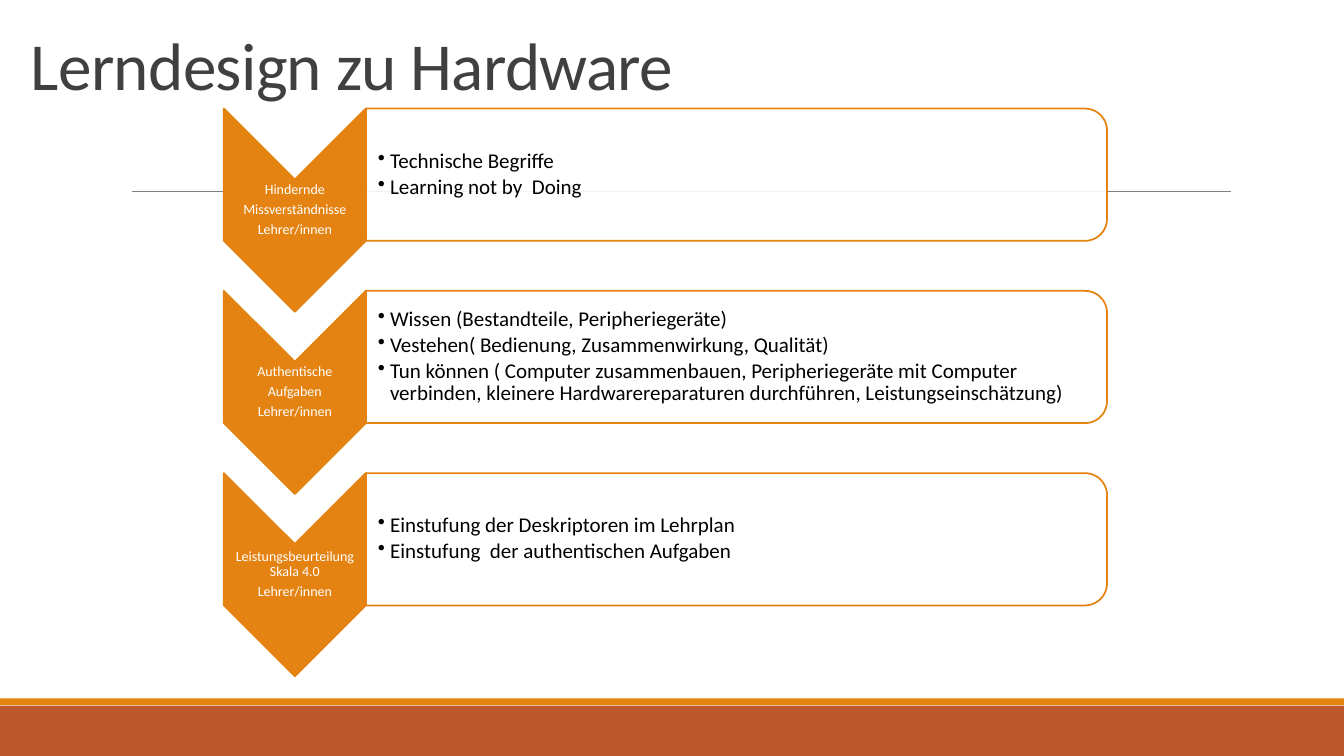
from dataclasses import dataclass

from lxml import etree
from pptx import Presentation
from pptx.dml.color import RGBColor
from pptx.enum.shapes import MSO_CONNECTOR, MSO_SHAPE
from pptx.enum.text import MSO_ANCHOR, PP_ALIGN
from pptx.oxml.ns import qn
from pptx.util import Inches, Pt

RECT = MSO_SHAPE.RECTANGLE
CHEVRON = MSO_SHAPE.CHEVRON
ROUND = MSO_SHAPE.ROUND_2_SAME_RECTANGLE
STRAIGHT = MSO_CONNECTOR.STRAIGHT
LEFT, CENTER = PP_ALIGN.LEFT, PP_ALIGN.CENTER
MIDDLE, BOTTOM = MSO_ANCHOR.MIDDLE, MSO_ANCHOR.BOTTOM

WIDTH, HEIGHT = Inches(13.33), Inches(7.5)
COLS, ROWS = 160, 90
STEP = 21.7


@dataclass(frozen=True)
class Theme:
    font: str = "Calibri"
    white: str = "FFFFFF"
    black: str = "000000"
    gray: str = "404040"
    rule: str = "808080"
    orange: str = "E48312"
    rust: str = "BD582C"
    title: float = 48
    body: float = 15
    label: float = 10
    edge: float = 1.25
    thin: float = 0.5


@dataclass(frozen=True)
class Box:
    x: float
    y: float
    w: float
    h: float

    def down(self, rows):
        return Box(self.x, self.y + rows, self.w, self.h)

    def emu(self):
        return col(self.x), row(self.y), col(self.w), row(self.h)


@dataclass(frozen=True)
class Style:
    size: float
    color: str
    align: int = LEFT
    anchor: int = MIDDLE
    lead: float = 0.9
    after: float = 0
    inset: tuple = (0.01, 0.01)
    bullet: bool = False
    track: int = 0


@dataclass(frozen=True)
class Stage:
    label: tuple
    points: tuple


THEME = Theme()
TITLE = Style(THEME.title, THEME.gray, anchor=BOTTOM, lead=0.85,
              inset=(0.1, 0.05), track=-50)
LABEL = Style(THEME.label, THEME.white, align=CENTER, after=3.5)
BODY = Style(THEME.body, THEME.black, after=2.25, inset=(0.12, 0.01), bullet=True)

ARROW = Box(23, 16.57, 24.2, 16.9)
NAME = Box(26.65, 21.35, 16.9, 7.3)
PANEL = Box(79.8, -23.3, 15.75, 88.2)
TEXT = Box(43.55, 13.7, 87.5, 14.15)

STAGES = (
    Stage(("Hindernde", "Missverständnisse", "Lehrer/innen"),
          ("Technische Begriffe", "Learning not by  Doing")),
    Stage(("Authentische", "Aufgaben", "Lehrer/innen"),
          ("Wissen (Bestandteile, Peripheriegeräte)",
           "Vestehen( Bedienung, Zusammenwirkung, Qualität)",
           "Tun können ( Computer zusammenbauen, Peripheriegeräte mit Computer "
           "verbinden, kleinere Hardwarereparaturen durchführen, "
           "Leistungseinschätzung)")),
    Stage(("Leistungsbeurteilung Skala 4.0", "Lehrer/innen"),
          ("Einstufung der Deskriptoren im Lehrplan",
           "Einstufung  der authentischen Aufgaben")),
)


def col(n: float) -> int:
    return round(WIDTH * n / COLS)


def row(n: float) -> int:
    return round(HEIGHT * n / ROWS)


def shape(slide, kind, box: Box, fill: str, edge: str = "",
          turn: float = 0, alpha: int = 100) -> None:
    item = slide.shapes.add_shape(kind, *box.emu())
    item.shadow.inherit = False
    item.rotation = turn
    item.fill.solid()
    item.fill.fore_color.rgb = RGBColor.from_string(fill)
    if alpha < 100:
        tint = item.fill._xPr.find(".//" + qn("a:srgbClr"))
        etree.SubElement(tint, qn("a:alpha"), val=str(alpha * 1000))
    if edge:
        item.line.color.rgb = RGBColor.from_string(edge)
        item.line.width = Pt(THEME.edge)
    else:
        item.line.fill.background()


def rule(slide, x: float, y: float, end: float) -> None:
    line = slide.shapes.add_connector(STRAIGHT, col(x), row(y), col(end), row(y))
    line.line.color.rgb = RGBColor.from_string(THEME.rule)
    line.line.width = Pt(THEME.thin)
    etree.SubElement(line._element.spPr, qn("a:effectLst"))


def write(slide, box: Box, lines: tuple, style: Style) -> None:
    frame = slide.shapes.add_textbox(*box.emu()).text_frame
    frame.word_wrap = True
    frame.vertical_anchor = style.anchor
    side, edge = style.inset
    frame.margin_left = Inches(side)
    frame.margin_right = frame.margin_top = frame.margin_bottom = Inches(edge)
    for i, line in enumerate(lines):
        para = frame.add_paragraph() if i else frame.paragraphs[0]
        run = para.add_run()
        run.text = line
        if style.track:
            run._r.get_or_add_rPr().set("spc", str(style.track))
        if style.bullet:
            props = para._p.get_or_add_pPr()
            props.set("marL", str(Inches(0.12)))
            props.set("indent", str(-Inches(0.12)))
            etree.SubElement(props, qn("a:buChar"), char="•")
        para.alignment = style.align
        para.line_spacing = style.lead
        para.space_after = Pt(style.after)
        para.font.name = THEME.font
        para.font.size = Pt(style.size)
        para.font.color.rgb = RGBColor.from_string(style.color)


def draw(slide, stage: Stage, drop: float) -> None:
    shape(slide, CHEVRON, ARROW.down(drop), THEME.orange, THEME.orange, 90)
    write(slide, NAME.down(drop), stage.label, LABEL)
    shape(slide, ROUND, PANEL.down(drop), THEME.white, THEME.orange, 90, 90)
    write(slide, TEXT.down(drop), stage.points, BODY)


def main() -> None:
    deck = Presentation()
    deck.slide_width, deck.slide_height = WIDTH, HEIGHT
    slide = deck.slides.add_slide(deck.slide_layouts[6])
    shape(slide, RECT, Box(0, 84, COLS, 6), THEME.rust)
    shape(slide, RECT, Box(0, 83.15, COLS, 0.8), THEME.orange)
    rule(slide, 15.72, 22.8, 146.5)
    write(slide, Box(2.5, 2.75, 132, 10.2), ("Lerndesign zu Hardware",), TITLE)
    for i, stage in enumerate(STAGES):
        draw(slide, stage, i * STEP)
    deck.save("out.pptx")


if __name__ == "__main__":
    main()
